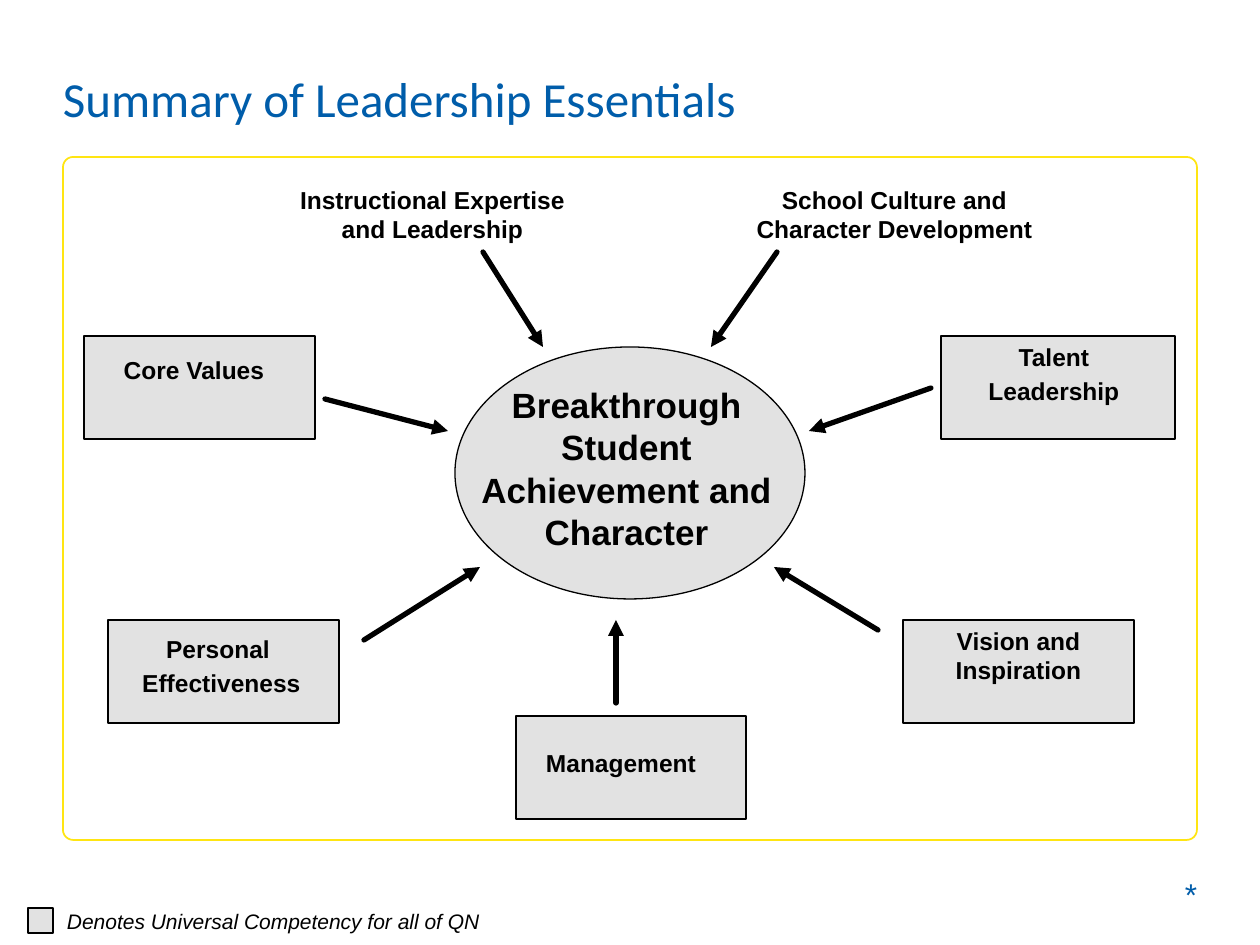
from lxml import etree
from pptx import Presentation
from pptx import util as u
from pptx.dml.color import RGBColor
from pptx.enum import shapes, text
from pptx.oxml.ns import qn

PX = u.Inches(1) / 126
BLACK, GREY, BLUE, YELLOW = "000000", "E2E2E2", "005DAA", "FFE512"
KIND, ALIGN = shapes.MSO_SHAPE, text.PP_ALIGN


def add_box(parent, kind, box, fill=GREY, line=BLACK, weight=0.75):
    sp = parent.shapes.add_shape(kind, *[round(v * PX) for v in box])
    sp.shadow.inherit = False
    if fill:
        sp.fill.solid()
        sp.fill.fore_color.rgb = RGBColor.from_string(fill)
    else:
        sp.fill.background()
    sp.line.color.rgb = RGBColor.from_string(line)
    sp.line.width = u.Pt(weight)
    return sp


def add_text(parent, box, lines, size=14, color=BLACK, font="Arial", bold=True,
             italic=False, align=ALIGN.CENTER, insets=(13, 6, 13, 6)):
    """Add one paragraph per line; insets are left, top, right, bottom."""
    sp = parent.shapes.add_textbox(*[round(v * PX) for v in box])
    tf = sp.text_frame
    tf.word_wrap = True
    tf.margin_left, tf.margin_top, tf.margin_right, tf.margin_bottom = [
        round(v * PX) for v in insets]
    for i, line in enumerate(lines):
        p = tf.add_paragraph() if i else tf.paragraphs[0]
        p.alignment = align
        if i:
            p.space_before = u.Pt(2.8)
        r = p.add_run()
        r.text = line
        r.font.name, r.font.size = font, u.Pt(size)
        r.font.bold, r.font.italic = bold, italic
        r.font.color.rgb = RGBColor.from_string(color)
    return tf


prs = Presentation()
prs.slide_width, prs.slide_height = u.Inches(10), u.Inches(7.5)
s = prs.slides.add_slide(prs.slide_layouts[6])

# Frame, title and page mark
frame = add_box(s, KIND.ROUNDED_RECTANGLE, (63, 157, 1134, 683), None, YELLOW, 1)
frame.adjustments[0] = 0.015
add_text(s, (63, 63, 1134, 35), ["Summary of Leadership Essentials"], 28, BLUE,
         "Calibri", bold=False, align=ALIGN.LEFT, insets=(0, 6, 0, 6))
tf = add_text(s, (903, 861, 294, 65), ["*"], 18, BLUE, bold=False,
              align=ALIGN.RIGHT, insets=(13, 6, 0, 6))
tf.vertical_anchor = text.MSO_ANCHOR.MIDDLE

# Competencies without a box
add_text(s, (270, 179, 325, 105), ["Instructional Expertise and Leadership"])
add_text(s, (693, 179, 378, 105), ["School Culture and Character Development"],
         insets=(38, 6, 13, 6))

# Universal competencies: box, text area, lines, top inset
competencies = [
    ((941, 336, 234, 103), (921, 336, 266, 95), ["Talent", "Leadership"], 6),
    ((108, 620, 231, 103), (59, 628, 325, 116), ["Personal ", "Effectiveness"], 6),
    ((903, 620, 231, 103), (882, 620, 273, 105), ["Vision and Inspiration"], 6),
    ((84, 336, 231, 103), (73, 349, 242, 84), ["Core Values"], 6),
    ((516, 716, 230, 103), (480, 724, 282, 73), ["Management"], 25),
]
for box, area, lines, top in competencies:
    group = s.shapes.add_group_shape()
    add_box(group, KIND.RECTANGLE, box)
    add_text(group, area, lines, insets=(13, top, 13, 6))

# Central goal
group = s.shapes.add_group_shape()
add_box(group, KIND.OVAL, (455, 347, 350, 252))
add_text(group, (448, 378, 357, 180),
         ["Breakthrough Student Achievement and Character"], 20)

# Arrows towards the goal
arrows = [
    (777, 252, 711, 347), (931, 388, 809, 431), (878, 630, 774, 567),
    (364, 640, 480, 567), (325, 399, 448, 431), (483, 252, 543, 347),
    (616, 703, 616, 620),
]
for ends in arrows:
    arrow = s.shapes.add_connector(shapes.MSO_CONNECTOR.STRAIGHT,
                                   *[round(v * PX) for v in ends])
    arrow.line.color.rgb = RGBColor.from_string(BLACK)
    arrow.line.width = u.Pt(3)
    ln = arrow.line._get_or_add_ln()
    ln.set("cap", "rnd")
    etree.SubElement(ln, qn("a:tailEnd"), type="triangle")
    etree.SubElement(arrow._element.spPr, qn("a:effectLst"))

# Legend
add_text(s, (32, 903, 892, 38), ["Denotes Universal Competency for all of QN"], 12,
         bold=False, italic=True, align=ALIGN.LEFT, insets=(35, 6, 13, 6))
add_box(s, KIND.RECTANGLE, (28, 908, 25, 25))

prs.save("out.pptx")
